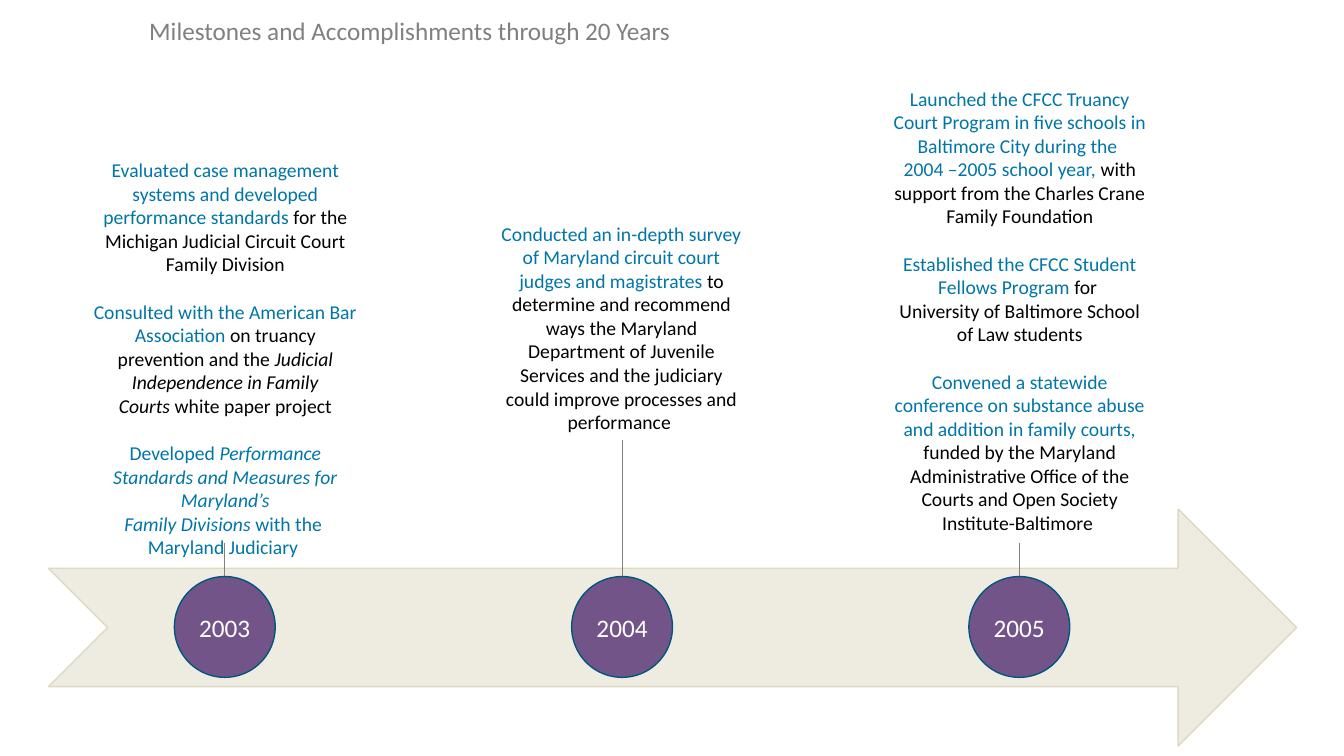
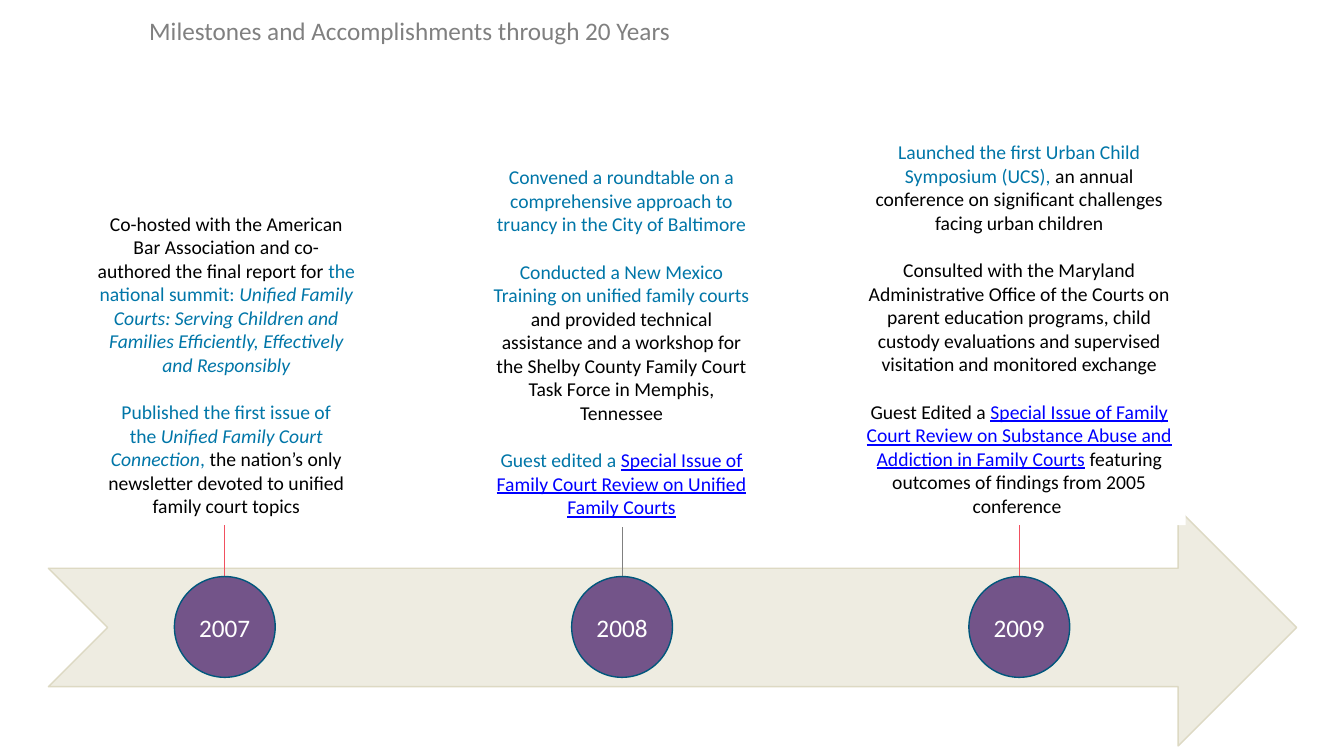
from dataclasses import dataclass
from typing import NamedTuple

from lxml import etree
from pptx import Presentation
from pptx.dml.color import RGBColor
from pptx.enum import shapes, text
from pptx.oxml import ns
from pptx.util import Inches, Pt


@dataclass(frozen=True)
class Theme:
    font: str = "Calibri"
    head: int = 18
    year: int = 18
    body: int = 14
    gap: int = 17
    white: str = "FFFFFF"
    black: str = "000000"
    grey: str = "808080"
    blue: str = "0076A8"
    link: str = "0000FF"
    sand: str = "EEECE1"
    edge: str = "DDD9C3"
    plum: str = "735489"
    rim: str = "00577C"
    red: str = "F15060"


THEME = Theme()
TITLE = "Milestones and Accomplishments through 20 Years"
DOT_LEFT, DOT_TOP, DOT_SIZE, DOT_STEP = 1.73, 5.72, 1, 3.94


class Run(NamedTuple):
    """Words in one style; ~ is a no-break space, a newline a line break."""
    words: str
    color: str = THEME.black
    slant: bool = False
    under: bool = False


class Mark(NamedTuple):
    year: str
    box: tuple[float, float, float, float]
    stem: str
    paras: list[list[Run]]


def blue(words: str, slant: bool = False) -> Run:
    return Run(words, THEME.blue, slant)


def link(words: str) -> Run:
    return Run(words, THEME.link, under=True)


PAGES = [
    [
        Mark("2003", (0.79, 1.52, 2.89, 3.87), THEME.grey, [
            [blue("Evaluated case management systems and developed performance standards "),
             Run("for the Michigan Judicial Circuit Court Family Division")],
            [blue("Consulted with the American Bar Association "),
             Run("on truancy prevention and the~"),
             Run("Judicial Independence in Family Courts", slant=True),
             Run("~white paper project")],
            [blue("Developed~"),
             blue("Performance Standards and Measures for Maryland’s\nFamily Divisions", True),
             blue("~with the \nMaryland Judiciary ")],
        ]),
        Mark("2004", (4.85, 2.15, 2.63, 2.22), THEME.grey, [
            [blue("Conducted an in-depth survey of Maryland circuit court judges and magistrates "),
             Run("to determine and recommend ways the Maryland Department of Juvenile "
                 "Services and the judiciary could improve processes and performance ")],
        ]),
        Mark("2005", (8.73, 0.81, 2.77, 4.58), THEME.grey, [
            [blue("Launched the CFCC Truancy Court Program in five schools in "
                  "Baltimore City during the \n2004 –2005 school year, "),
             Run("with support from the Charles Crane Family Foundation")],
            [blue("Established the CFCC Student Fellows Program "),
             Run("for \nUniversity of Baltimore School of Law students")],
            [blue("Convened a statewide conference on substance abuse and addition "
                  "in family courts, "),
             Run("funded by the Maryland Administrative Office of the Courts and "
                 "Open Society Institute-Baltimore ")],
        ]),
    ],
    [
        Mark("2007", (0.87, 2.05, 2.75, 3.16), THEME.red, [
            [Run("Co-hosted with the American Bar Association and co-authored "
                 "the final report for "),
             blue("the national summit:~"),
             blue("Unified Family Courts: Serving Children and Families "
                  "Efficiently, Effectively and Responsibly", True)],
            [blue("Published the first issue of the~"),
             blue("Unified Family Court Connection", True),
             blue(", "),
             Run("the nation’s only newsletter devoted to unified family court topics")],
        ]),
        Mark("2008", (4.76, 1.59, 2.81, 3.64), THEME.grey, [
            [blue("Convened a roundtable on a comprehensive approach to truancy "
                  "in the City of Baltimore")],
            [blue("Conducted a New Mexico Training on unified family courts "),
             Run("and provided technical assistance and a workshop for the Shelby "
                 "County Family Court Task Force in Memphis, Tennessee")],
            [blue("Guest edited a~"),
             link("Special Issue of Family Court Review on Unified Family Courts")],
        ]),
        Mark("2009", (8.46, 1.34, 3.3, 3.87), THEME.red, [
            [blue("Launched the first Urban Child Symposium (UCS), "),
             Run("an annual conference on significant challenges facing urban children")],
            [Run("Consulted with the Maryland Administrative Office of the Courts on "
                 "parent education programs, child custody evaluations and supervised "
                 "visitation and monitored exchange")],
            [Run("Guest Edited a~"),
             link("Special Issue of Family Court Review on Substance Abuse and "
                  "Addiction in Family Courts"),
             Run("~featuring outcomes of findings from 2005 conference ")],
        ]),
    ],
]


def rgb(code: str) -> RGBColor:
    return RGBColor.from_string(code)


def style(para, size: int, align) -> None:
    para.alignment = align
    para.font.name = THEME.font
    para.font.size = Pt(size)


def add_shape(slide, kind, box: tuple, fill: str, line: str):
    shape = slide.shapes.add_shape(kind, *map(Inches, box))
    shape.shadow.inherit = False
    shape.fill.solid()
    shape.fill.fore_color.rgb = rgb(fill)
    shape.line.color.rgb = rgb(line)
    shape.line.width = Pt(1)
    return shape


def add_title(slide) -> None:
    title = slide.shapes.title
    title.left, title.top, title.width, title.height = map(Inches, (1.38, 0.1, 6.35, 0.4))
    frame = title.text_frame
    frame.text = TITLE
    frame.auto_size = text.MSO_AUTO_SIZE.NONE
    frame.vertical_anchor = text.MSO_ANCHOR.TOP
    para = frame.paragraphs[0]
    style(para, THEME.head, text.PP_ALIGN.LEFT)
    para.font.color.rgb = rgb(THEME.grey)


def add_run(para, run: Run) -> None:
    for num, part in enumerate(run.words.replace("~", chr(160)).split("\n")):
        if num:
            para.add_line_break()
        piece = para.add_run()
        piece.text = part
        piece.font.color.rgb = rgb(run.color)
        if run.slant:
            piece.font.italic = True
        if run.under:
            piece.font.underline = True


def add_story(slide, mark: Mark) -> None:
    story = slide.shapes.add_textbox(*map(Inches, mark.box))
    story.fill.solid()
    story.fill.fore_color.rgb = rgb(THEME.white)
    frame = story.text_frame
    frame.word_wrap = True
    frame.auto_size = text.MSO_AUTO_SIZE.SHAPE_TO_FIT_TEXT
    for num, runs in enumerate(mark.paras):
        para = frame.add_paragraph() if num else frame.paragraphs[0]
        style(para, THEME.body, text.PP_ALIGN.CENTER)
        if num:
            para.space_before = Pt(THEME.gap)
        for run in runs:
            add_run(para, run)


def add_stem(slide, x: float, top: float, color: str) -> None:
    stem = slide.shapes.add_connector(
        shapes.MSO_CONNECTOR.STRAIGHT, *map(Inches, (x, top, x, DOT_TOP)))
    stem.line.color.rgb = rgb(color)
    stem.line.width = Pt(0.5)
    etree.SubElement(stem._element.spPr, ns.qn("a:effectLst"))


def add_dot(slide, left: float, year: str) -> None:
    dot = add_shape(slide, shapes.MSO_SHAPE.OVAL,
                    (left, DOT_TOP, DOT_SIZE, DOT_SIZE), THEME.plum, THEME.rim)
    frame = dot.text_frame
    frame.text = year
    frame.word_wrap = False
    frame.vertical_anchor = text.MSO_ANCHOR.MIDDLE
    para = frame.paragraphs[0]
    style(para, THEME.year, text.PP_ALIGN.CENTER)
    para.font.color.rgb = rgb(THEME.white)


def add_page(deck, marks: list[Mark]) -> None:
    slide = deck.slides.add_slide(deck.slide_layouts.get_by_name("Title Only"))
    add_title(slide)
    add_shape(slide, shapes.MSO_SHAPE.NOTCHED_RIGHT_ARROW,
              (0.48, 5.05, 12.38, 2.35), THEME.sand, THEME.edge)
    for num, mark in enumerate(marks):
        left = DOT_LEFT + num * DOT_STEP
        add_story(slide, mark)
        add_stem(slide, left + DOT_SIZE / 2, mark.box[1] + mark.box[3], mark.stem)
        add_dot(slide, left, mark.year)


def main() -> None:
    deck = Presentation()
    deck.slide_width, deck.slide_height = Inches(13.33), Inches(7.5)
    for marks in PAGES:
        add_page(deck, marks)
    deck.save("out.pptx")


if __name__ == "__main__":
    main()
